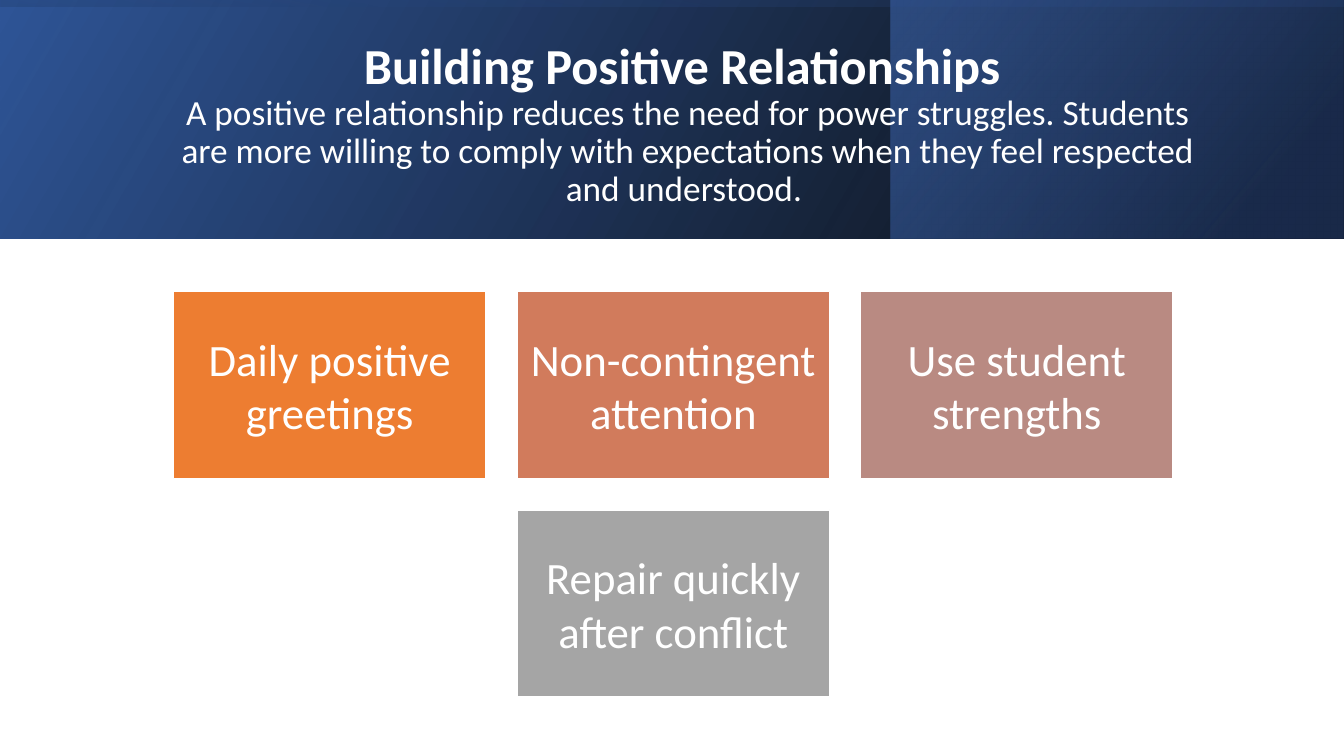
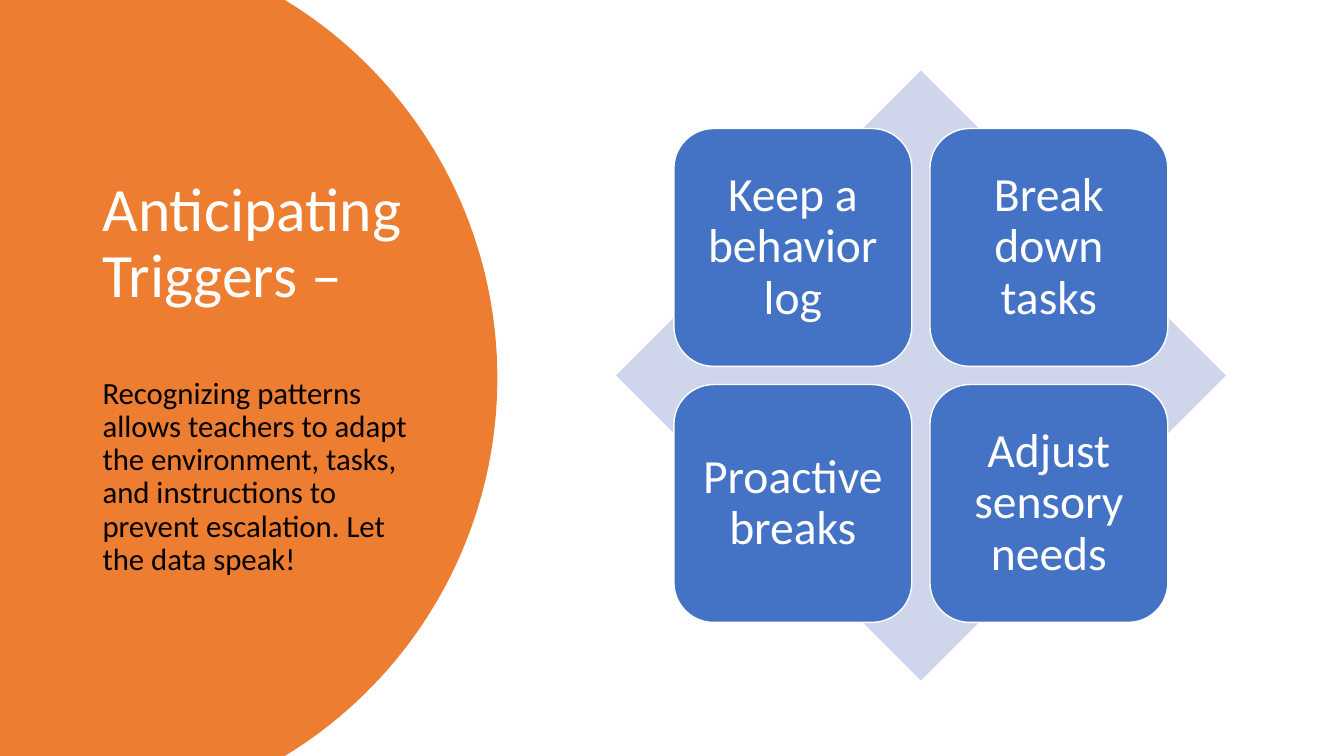
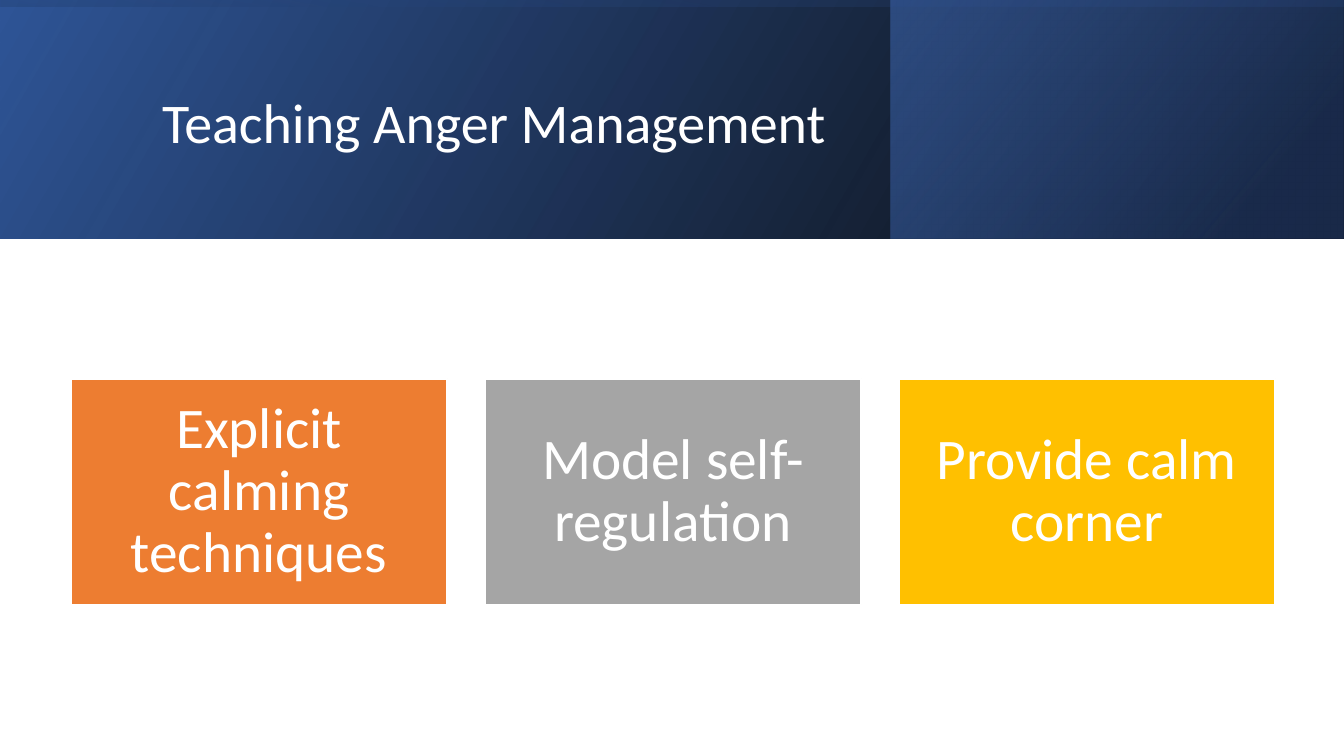
from math import asin, cos, sin

from lxml.etree import SubElement
from pptx import Presentation
from pptx.dml.color import RGBColor
from pptx.enum.shapes import MSO_SHAPE
from pptx.enum.text import MSO_ANCHOR, PP_ALIGN
from pptx.oxml.ns import qn
from pptx.util import Pt

FONT = "Calibri"
SLIDE_WIDTH, SLIDE_HEIGHT = 960, 540
BAND_HEIGHT = 170.6
COLORS = {
    "white": "FFFFFF", "black": "000000", "orange": "ED7D31",
    "clay": "D17B5C", "rose": "B98A82", "gray": "A5A5A5", "gold": "FFC000",
    "blue": "4472C4", "deep_blue": "2F5597", "navy": "203864", "pale_blue": "CFD5EA",
}


def rgb(name):
    return RGBColor.from_string(COLORS[name])


def add_filled_shape(slide, kind, box, color, line=None):
    shape = slide.shapes.add_shape(kind, *map(Pt, box))
    finish_shape(shape, color, line)
    return shape


def finish_shape(shape, color, line=None):
    shape.shadow.inherit = False
    shape.fill.solid()
    shape.fill.fore_color.rgb = rgb(color)
    if line:
        shape.line.color.rgb = rgb(line)
        shape.line.width = Pt(1)
    else:
        shape.line.fill.background()


def add_gradient(slide, box, stops, angle, rotation=0):
    """Add a mirrored rectangle; each stop is (position, color, opacity percent)."""
    shape = add_filled_shape(slide, MSO_SHAPE.RECTANGLE, box, "black")
    shape.rotation = rotation
    shape.element.spPr.get_or_add_xfrm().set("flipH", "1")
    shape.fill.gradient()
    shape.fill.gradient_angle = angle
    for stop, (position, color, _) in zip(shape.fill.gradient_stops, stops):
        stop.position = position
        stop.color.rgb = rgb(color)
    color_elements = shape.element.spPr.iter(qn("a:srgbClr"))
    for element, (_, _, opacity) in zip(list(color_elements), stops):
        if opacity < 100:
            SubElement(element, qn("a:alpha")).set("val", str(opacity * 1000))


def style_paragraph(paragraph, size, align, spacing):
    paragraph.alignment = align
    paragraph.line_spacing = spacing
    paragraph.font.name = FONT
    paragraph.font.size = Pt(size)
    paragraph.font.color.rgb = rgb("white")


def add_title(slide, box, title, size, align=PP_ALIGN.LEFT, bold=False):
    """Return the title paragraph, so that a smaller text can follow in it."""
    frame = slide.shapes.add_textbox(*map(Pt, box)).text_frame
    frame.word_wrap = True
    frame.vertical_anchor = MSO_ANCHOR.MIDDLE
    paragraph = frame.paragraphs[0]
    style_paragraph(paragraph, size, align, 0.9)
    run = paragraph.add_run()
    run.text = title
    if bold:
        run.font.bold = True
    return paragraph


def add_subtitle(paragraph, text, size, color, breaks):
    for _ in range(breaks):
        paragraph.add_line_break()
    run = paragraph.add_run()
    run.text = text
    run.font.size = Pt(size)
    run.font.color.rgb = rgb(color)


def add_title_band(slide, title, size, **style):
    add_gradient(slide, (0, 0, SLIDE_WIDTH, BAND_HEIGHT),
                 [(0, "black", 96), (1, "deep_blue", 100)], 30)
    add_gradient(slide, (636.5, 0, 323, BAND_HEIGHT),
                 [(0.19, "navy", 68), (1, "blue", 48)], 40)
    # Upright strip, turned to lie across the band
    shift = (SLIDE_WIDTH - BAND_HEIGHT) / 2
    add_gradient(slide, (shift, -shift, BAND_HEIGHT, SLIDE_WIDTH),
                 [(0.23, "deep_blue", 16), (0.99, "black", 45)], 10, 270)
    return add_title(slide, (108.7, 27.4, 765.4, 123.8), title, size, **style)


def add_tiles(slide, area, tile, gap, rows, size, inset,
              kind=MSO_SHAPE.RECTANGLE, spacing=0.9):
    """Lay out rows of (label, color) tiles, each row centered in area (left, top, width)."""
    left, top, area_width = area
    width, height = tile
    for row_index, row in enumerate(rows):
        row_width = len(row) * (width + gap) - gap
        row_left = left + (area_width - row_width) / 2
        row_top = top + row_index * (height + gap)
        for column, (label, color) in enumerate(row):
            box = (row_left + column * (width + gap), row_top, width, height)
            shape = add_filled_shape(slide, kind, box, color, "white")
            frame = shape.text_frame
            frame.word_wrap = True
            frame.vertical_anchor = MSO_ANCHOR.MIDDLE
            frame.margin_left = frame.margin_right = Pt(inset)
            frame.margin_top = frame.margin_bottom = Pt(inset)
            frame.text = label
            style_paragraph(frame.paragraphs[0], size, PP_ALIGN.CENTER, spacing)


def add_round_panel(slide, box, chord, color):
    """Add a panel whose right side bulges as an arc, from x = chord to the full width."""
    left, top, width, height = box
    bulge = width - chord
    radius = (height ** 2 / 4 + bulge ** 2) / (2 * bulge)
    half_angle = asin(height / 2 / radius)
    center_x, center_y = left + width - radius, top + height / 2
    steps = 80
    angles = [half_angle * (2 * step / steps - 1) for step in range(steps + 1)]
    arc = [(Pt(center_x + radius * cos(angle)), Pt(center_y + radius * sin(angle)))
           for angle in angles]
    builder = slide.shapes.build_freeform(Pt(left), Pt(top))
    builder.add_line_segments(arc + [(Pt(left), Pt(top + height))], close=True)
    finish_shape(builder.convert_to_shape(), color)


def build_relationships(slide):
    paragraph = add_title_band(slide, "Building Positive Relationships ", 36,
                               align=PP_ALIGN.CENTER, bold=True)
    add_subtitle(paragraph, "A positive relationship reduces the need for power struggles. "
                 "Students are more willing to comply with expectations when they feel "
                 "respected and understood. ", 25.2, "white", 1)
    rows = [[("Daily positive greetings", "orange"), ("Non-contingent attention", "clay"),
             ("Use student strengths", "rose")],
            [("Repair quickly after conflict", "gray")]]
    add_tiles(slide, (124, 208.2, 714), (223.2, 133.8), 22.2, rows, 32, 9.4, spacing=1)


def build_triggers(slide):
    add_round_panel(slide, (0, 0, 355.3, SLIDE_HEIGHT), 203.5, "orange")
    paragraph = add_title(slide, (66.2, 50.4, 232.6, 438.5), "Anticipating Triggers –", 44)
    add_subtitle(paragraph, "Recognizing patterns allows teachers to adapt the environment, "
                 "tasks, and instructions to prevent escalation. Let the data speak!",
                 22, "black", 2)
    left, top, side = 440, 50.4, 435.6
    tile, gap = 169.9, 13
    add_filled_shape(slide, MSO_SHAPE.DIAMOND, (left, top, side, side), "pale_blue")
    rows = [[("Keep a behavior log", "blue"), ("Break down tasks", "blue")],
            [("Proactive breaks", "blue"), ("Adjust sensory needs", "blue")]]
    tiles_top = top + (side - 2 * tile - gap) / 2
    add_tiles(slide, (left, tiles_top, side), (tile, tile), gap, rows, 34, 10.2,
              kind=MSO_SHAPE.ROUNDED_RECTANGLE)


def build_anger_management(slide):
    add_title_band(slide, "Teaching Anger Management", 40)
    rows = [[("Explicit calming techniques", "orange"), ("Model self-regulation", "gray"),
             ("Provide calm corner", "gold")]]
    add_tiles(slide, (50.8, 270.6, 860), (268.6, 161.2), 27.1, rows, 41, 12.2)


def main():
    presentation = Presentation()
    presentation.slide_width = Pt(SLIDE_WIDTH)
    presentation.slide_height = Pt(SLIDE_HEIGHT)
    blank_layout = presentation.slide_layouts[6]
    for build in (build_relationships, build_triggers, build_anger_management):
        build(presentation.slides.add_slide(blank_layout))
    presentation.save("out.pptx")


if __name__ == "__main__":
    main()
